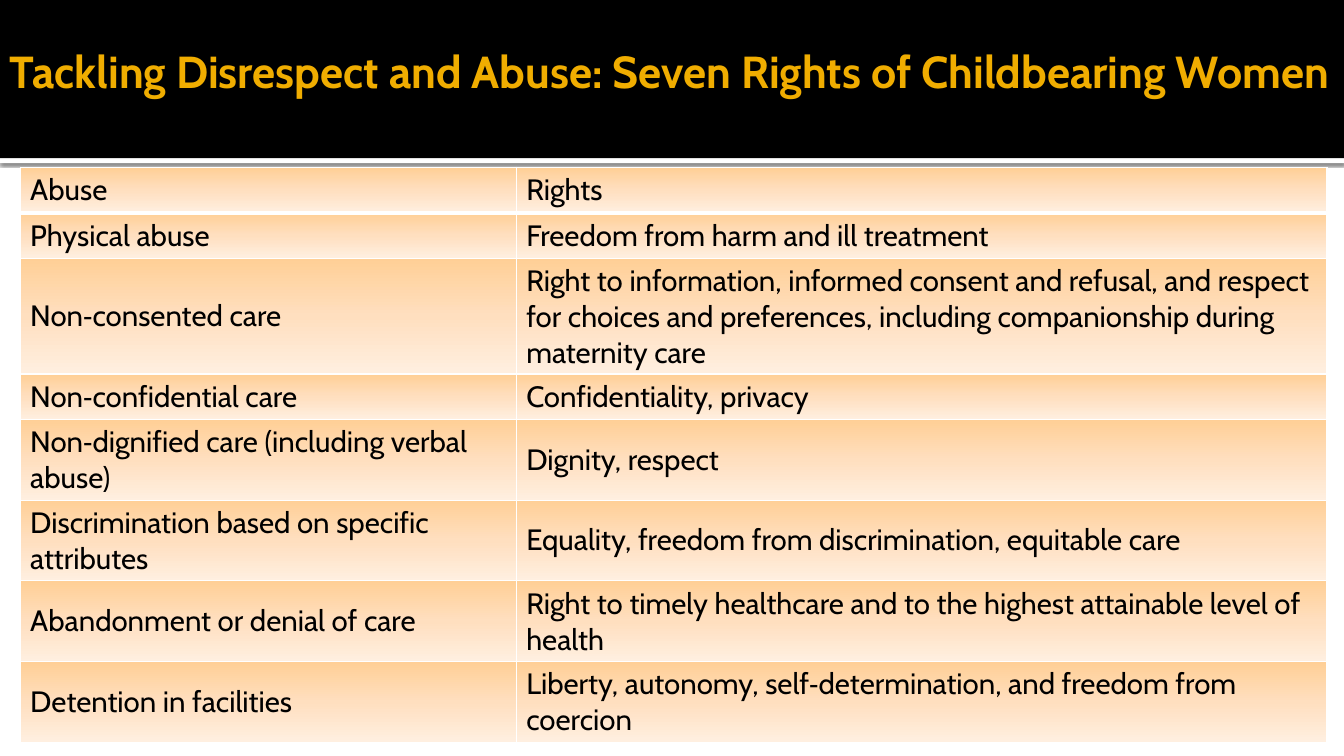
from lxml.etree import SubElement
from pptx import Presentation
from pptx.dml.color import RGBColor
from pptx.enum.shapes import MSO_SHAPE
from pptx.enum.text import MSO_ANCHOR, PP_ALIGN
from pptx.oxml.ns import qn
from pptx.util import Inches, Pt

STYLE = {
    "body": {"name": "Cabin", "size": Pt(21), "bold": False},
    "title": {"name": "Cabin", "size": Pt(32), "bold": True},
    "black": "000000", "white": "FFFFFF", "gold": "F0AD00",
    "fade": {0: "FFCF96", 50: "FFDFBF", 100: "FFEFE0"},
}
INSETS = {"margin_left": Inches(0.1), "margin_right": Inches(0.05),
          "margin_top": Inches(0.05), "margin_bottom": Inches(0.05),
          "word_wrap": True, "vertical_anchor": MSO_ANCHOR.MIDDLE}

ONE, TWO, THREE, LAST = 5.87, 10.27, 14.8, 9.73  # row heights, % of slide
RIGHTS = [
    (ONE, "Abuse", "Rights"),
    (ONE, "Physical abuse", "Freedom from harm and ill treatment"),
    (THREE, "Non‐consented care",
     "Right to information, informed consent and refusal, and respect for "
     "choices and preferences, including companionship during maternity care"),
    (ONE, "Non‐confidential care", "Confidentiality, privacy"),
    (TWO, "Non‐dignified care (including verbal abuse)", "Dignity, respect"),
    (TWO, "Discrimination based on specific attributes",
     "Equality, freedom from discrimination, equitable care"),
    (TWO, "Abandonment or denial of care",
     "Right to timely healthcare and to the highest attainable level of health"),
    (LAST, "Detention in facilities",
     "Liberty, autonomy, self‐determination, and freedom from coercion"),
]


def color(code):
    return RGBColor.from_string(code)


def apply(target, values):
    for name, value in values.items():
        setattr(target, name, value)


def add(parent, tag, **attrs):
    """Append a drawing element with the given attributes."""
    return SubElement(parent, qn(f"a:{tag}"),
                      {key: str(value) for key, value in attrs.items()})


class Page:
    """Draws on one slide; places and sizes are percent of the slide."""

    def __init__(self, deck, style):
        self.deck, self.style = deck, style
        self.slide = deck.slides.add_slide(deck.slide_layouts[6])

    def wide(self, share):
        return round(self.deck.slide_width * share / 100)

    def high(self, share):
        return round(self.deck.slide_height * share / 100)

    def place(self, x, y, w, h):
        return self.wide(x), self.high(y), self.wide(w), self.high(h)

    def label(self, frame, text, font, ink):
        line = frame.paragraphs[0]
        line.alignment = PP_ALIGN.LEFT
        run = line.add_run()
        run.text = text
        apply(run.font, self.style[font])
        run.font.color.rgb = color(self.style[ink])

    def band(self, box, ink):
        shape = self.slide.shapes.add_shape(MSO_SHAPE.RECTANGLE, *self.place(*box))
        shape.shadow.inherit = False
        shape.fill.solid()
        shape.fill.fore_color.rgb = color(self.style[ink])
        shape.line.fill.background()
        return shape

    def shade(self, shape):
        """Cast a soft shadow just below the shape."""
        effects = shape._element.spPr.find(qn("a:effectLst"))
        cast = add(effects, "outerShdw", blurRad=Pt(2.5), dist=Pt(0.8),
                   dir=5400000, algn="tl", rotWithShape=0)
        ink = add(cast, "srgbClr", val=self.style["black"])
        add(ink, "alpha", val=60000)

    def title(self, box, text):
        shape = self.slide.shapes.add_textbox(*self.place(*box))
        shape.fill.solid()
        shape.fill.fore_color.rgb = color(self.style["black"])
        apply(shape.text_frame, INSETS)
        self.label(shape.text_frame, text, "title", "gold")

    def paint(self, cell, base):
        """Give a cell white borders and a downward fade."""
        props = cell._tc.get_or_add_tcPr()
        for side in "LRTB":
            edge = add(props, f"ln{side}", w=Pt(base if side == "B" else 1))
            add(add(edge, "solidFill"), "srgbClr", val=self.style["white"])
        fade = add(props, "gradFill", rotWithShape=1)
        stops = add(fade, "gsLst")
        for share, code in self.style["fade"].items():
            add(add(stops, "gs", pos=share * 1000), "srgbClr", val=code)
        add(fade, "lin", ang=5400000, scaled=0)

    def table(self, x, y, widths, rows):
        box = self.place(x, y, sum(widths), sum(row[0] for row in rows))
        grid = self.slide.shapes.add_table(len(rows), len(widths), *box).table
        apply(grid, {"first_row": False, "horz_banding": False})
        for column, width in zip(grid.columns, widths):
            column.width = self.wide(width)
        for i, (height, *texts) in enumerate(rows):
            grid.rows[i].height = self.high(height)
            for j, text in enumerate(texts):
                cell = grid.cell(i, j)
                cell.vertical_anchor = MSO_ANCHOR.MIDDLE if i else MSO_ANCHOR.TOP
                self.label(cell.text_frame, text, "body", "black")
                self.paint(cell, 1 if i else 3)


def main():
    deck = Presentation()
    apply(deck, {"slide_width": Inches(13.33), "slide_height": Inches(7.5)})
    page = Page(deck, STYLE)
    page.shade(page.band((0, 20.93, 100, 0.67), "white"))
    page.band((0, 0, 100, 20.93), "black")
    page.title((0, 3.6, 100, 11.6),
               "Tackling Disrespect and Abuse: Seven Rights of Childbearing Women")
    page.table(1.5, 22.13, (36.91, 60.32), RIGHTS)
    deck.save("out.pptx")


if __name__ == "__main__":
    main()
